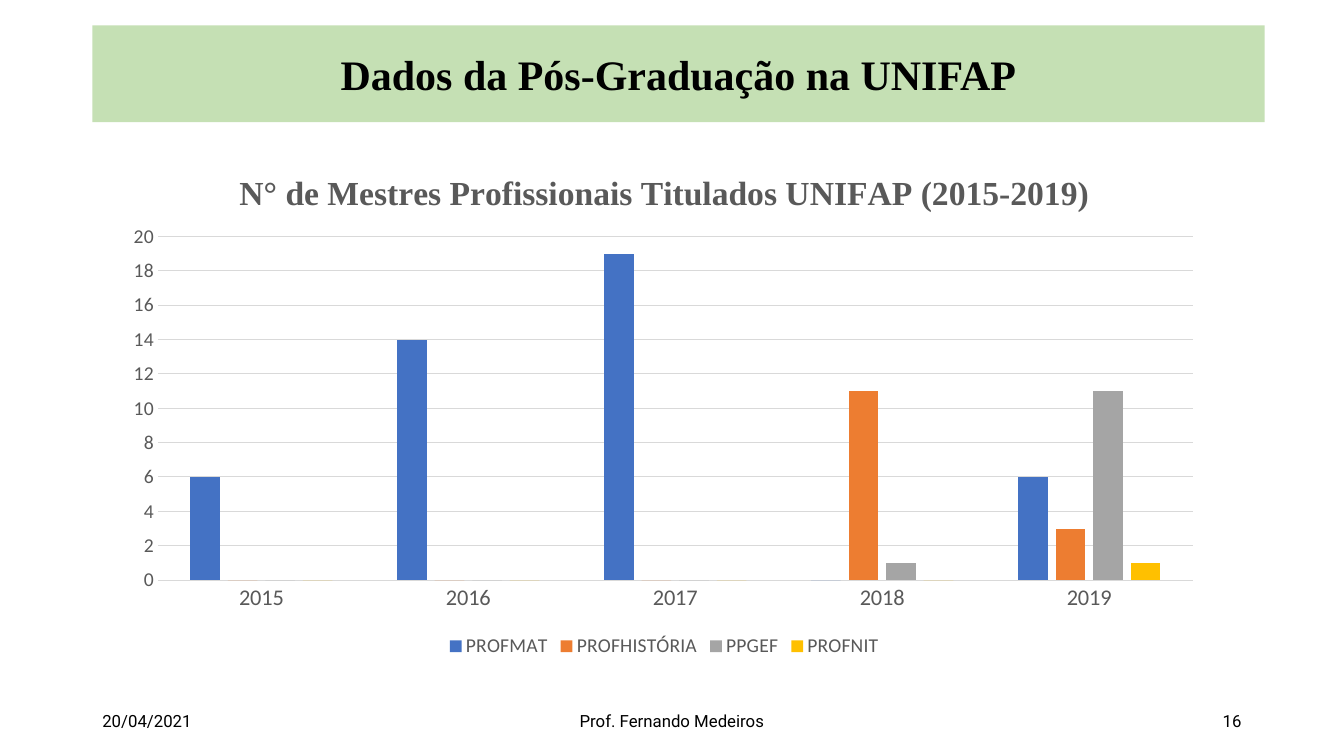
import pptx
import pptx.util
import pptx.dml.color
import pptx.enum.text
import pptx.enum.chart
import pptx.chart.data
import pptx.oxml

Cm, Pt = pptx.util.Cm, pptx.util.Pt
ALIGN = pptx.enum.text.PP_ALIGN
MID = pptx.enum.text.MSO_ANCHOR.MIDDLE

TITLE = "Dados da Pós-Graduação na UNIFAP"
HEAD = "N° de Mestres Profissionais Titulados UNIFAP (2015-2019)"
YEARS = ["2015", "2016", "2017", "2018", "2019"]
SERIES = [
    ("PROFMAT", (6, 14, 19, 0, 6), "blue"),
    ("PROFHISTÓRIA", (0, 0, 0, 11, 3), "orange"),
    ("PPGEF", (0, 0, 0, 1, 11), "gray"),
    ("PROFNIT", (0, 0, 0, 0, 1), "gold"),
]
# text, left and width in cm, alignment
FOOT = [
    ("20/04/2021", 2.33, 7.62, ALIGN.LEFT),
    ("Prof. Fernando Medeiros", 11.22, 11.43, ALIGN.CENTER),
    ("16", 23.92, 7.62, ALIGN.RIGHT),
]
COLORS = {
    "band": "C5E0B4", "black": "000000", "text": "595959", "grid": "D9D9D9",
    "blue": "4472C4", "orange": "ED7D31", "gray": "A5A5A5", "gold": "FFC000",
}
PLOT = {"x": 0.04, "y": 0.17, "w": 0.94, "h": 0.67}  # shares of the chart


def color(name):
    return pptx.dml.color.RGBColor.from_string(COLORS[name])


def style(font, face, size, tone, bold=False):
    font.name, font.size, font.bold = face, Pt(size), bold
    font.color.rgb = color(tone)


def write(frame, text, align, *look):
    frame.word_wrap = True
    frame.vertical_anchor = MID
    par = frame.paragraphs[0]
    par.alignment = align
    run = par.add_run()
    run.text = text
    style(run.font, *look)


def rule(line):
    line.color.rgb = color("grid")
    line.width = Pt(0.75)


def place(chart):
    """Fix the inner plot area at the PLOT shares."""
    area = chart._chartSpace.chart.plotArea
    for old in area.findall(pptx.oxml.ns.qn("c:layout")):
        area.remove(old)
    parts = "".join(f'<c:{k}Mode val="edge"/>' for k in "xy")
    parts += "".join(f'<c:{k} val="{v}"/>' for k, v in PLOT.items())
    area.insert(0, pptx.oxml.parse_xml(
        f'<c:layout {pptx.oxml.ns.nsdecls("c")}><c:manualLayout>'
        f'<c:layoutTarget val="inner"/>{parts}</c:manualLayout></c:layout>'))


def add_bars(slide):
    enum = pptx.enum.chart
    data = pptx.chart.data.CategoryChartData()
    data.categories = YEARS
    for name, vals, _ in SERIES:
        data.add_series(name, vals)
    chart = slide.shapes.add_chart(
        enum.XL_CHART_TYPE.COLUMN_CLUSTERED,
        Cm(2.87), Cm(3.76), Cm(27.74), Cm(12.93), data).chart
    style(chart.font, "Calibri", 10, "black")

    chart.has_title = True
    run = chart.chart_title.text_frame.paragraphs[0].add_run()
    run.text = HEAD
    style(run.font, "Times New Roman", 24, "text", True)
    chart.chart_title.include_in_layout = False

    chart.has_legend = True
    chart.legend.position = enum.XL_LEGEND_POSITION.BOTTOM
    chart.legend.include_in_layout = False
    style(chart.legend.font, "Calibri", 14, "text")

    cat, val = chart.category_axis, chart.value_axis
    for axis, size in ((cat, 16), (val, 14)):
        style(axis.tick_labels.font, "Calibri", size, "text")
        axis.major_tick_mark = enum.XL_TICK_MARK.NONE
        axis.minor_tick_mark = enum.XL_TICK_MARK.NONE
    rule(cat.format.line)
    val.format.line.fill.background()
    rule(val.major_gridlines.format.line)
    val.minimum_scale, val.maximum_scale, val.major_unit = 0, 20, 2

    plot = chart.plots[0]
    plot.gap_width, plot.overlap = 219, -27
    plot.vary_by_categories = False
    for bar, (_, _, tone) in zip(plot.series, SERIES):
        bar.format.fill.solid()
        bar.format.fill.fore_color.rgb = color(tone)
    place(chart)


def main():
    deck = pptx.Presentation()
    deck.slide_width, deck.slide_height = Cm(33.87), Cm(19.05)
    slide = deck.slides.add_slide(deck.slide_layouts[5])

    for text, left, width, align in FOOT:
        box = slide.shapes.add_textbox(Cm(left), Cm(17.65), Cm(width), Cm(1.01))
        write(box.text_frame, text, align, "Roboto", 12, "black")

    title = slide.shapes.title
    title.left, title.top = Cm(2.33), Cm(0.64)
    title.width, title.height = Cm(29.54), Cm(2.44)
    title.fill.solid()
    title.fill.fore_color.rgb = color("band")
    write(title.text_frame, TITLE, ALIGN.CENTER,
          "Times New Roman", 30, "black", True)

    add_bars(slide)
    deck.save("out.pptx")


if __name__ == "__main__":
    main()
